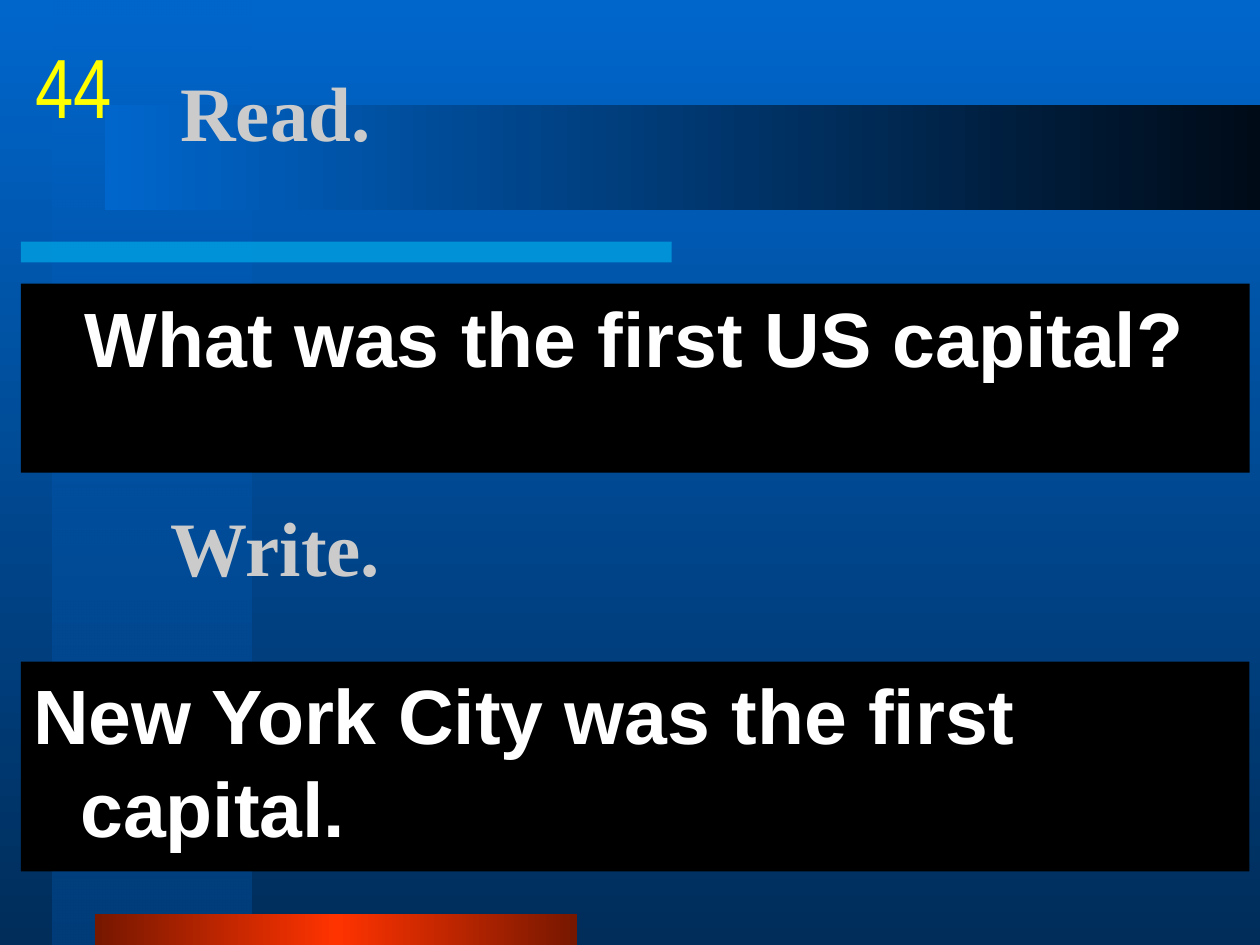
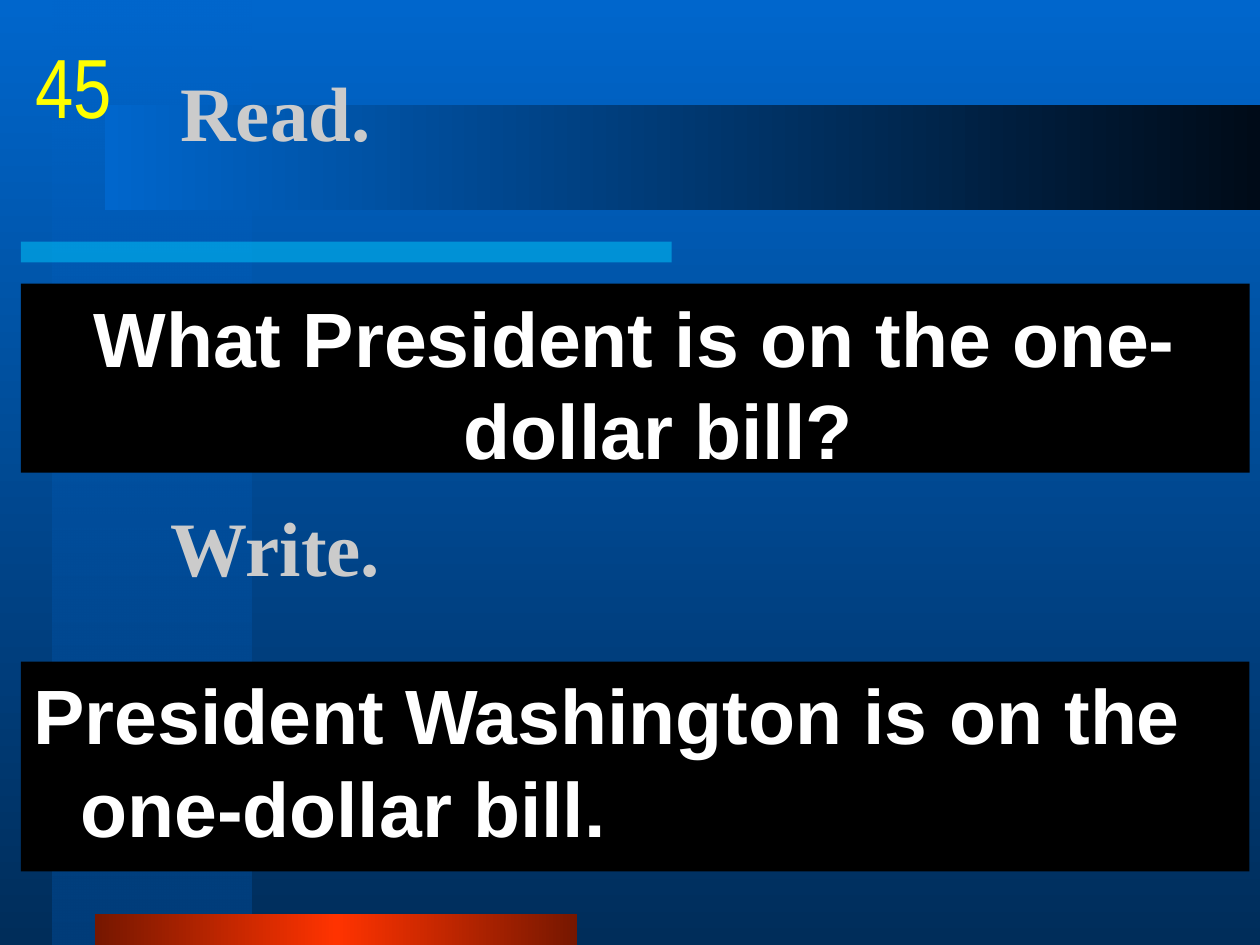
import pptx
import pptx.dml.color
import pptx.enum.shapes
import pptx.enum.text
import pptx.oxml.ns
import pptx.util
from lxml import etree

Cm = pptx.util.Cm
Pt = pptx.util.Pt
RGB = pptx.dml.color.RGBColor
ALIGN = pptx.enum.text.PP_ALIGN
ANCHOR = pptx.enum.text.MSO_ANCHOR
qn = pptx.oxml.ns.qn

BLUE = RGB(0x00, 0x66, 0xCC)
NAVY = RGB(0x00, 0x2D, 0x5A)
STEEL = RGB(0x00, 0x3D, 0x7A)
NIGHT = RGB(0x00, 0x0B, 0x18)
CYAN = RGB(0x00, 0xCC, 0xFF)
RED = RGB(0xFF, 0x33, 0x00)
RUST = RGB(0x76, 0x17, 0x00)
BLACK = RGB(0x00, 0x00, 0x00)
WHITE = RGB(0xFF, 0xFF, 0xFF)
GREY = RGB(0xCB, 0xCB, 0xCB)
YELLOW = RGB(0xFF, 0xFF, 0x00)

WIDE, HIGH = 25.4, 19.05
HEAD = dict(font="Times New Roman", color=GREY, anchor=ANCHOR.MIDDLE)
CARD = dict(font="Arial", color=WHITE, hang=0.95, before=20)
CARDS = [
    ("44", "What was the first US capital?", "New York City was the first capital."),
    ("45", "What President is on the one-dollar bill?",
     "President Washington is on the one-dollar bill."),
]


def place(shape, box):
    """Move a shape to a box given in centimetres."""
    shape.left, shape.top, shape.width, shape.height = map(Cm, box)


def fade(color, alpha):
    """Set the opacity, in percent, of a colour element."""
    etree.SubElement(color, qn("a:alpha")).set("val", str(alpha * 1000))


def blend(fill, root, angle, stops):
    """Fill with evenly spaced colour stops, each a colour and opacity."""
    fill.gradient()
    fill.gradient_angle = angle
    row = root.find(".//" + qn("a:gsLst"))
    for old in list(row):
        row.remove(old)
    for i, (color, alpha) in enumerate(stops):
        stop = etree.SubElement(row, qn("a:gs"))
        stop.set("pos", str(100000 * i // (len(stops) - 1)))
        tint = etree.SubElement(stop, qn("a:srgbClr"))
        tint.set("val", str(color))
        if alpha < 100:
            fade(tint, alpha)


def bar(slide, box):
    """Add a plain rectangle without line or shadow."""
    shape = slide.shapes.add_shape(pptx.enum.shapes.MSO_SHAPE.RECTANGLE, *map(Cm, box))
    shape.shadow.inherit = False
    shape.line.fill.background()
    return shape


def write(shape, text, font, color, size=44, bold=True, align=ALIGN.LEFT,
          anchor=ANCHOR.TOP, hang=0, before=0, wrap=True):
    """Put formatted text into a shape."""
    frame = shape.text_frame
    frame.auto_size = pptx.enum.text.MSO_AUTO_SIZE.NONE
    frame.word_wrap = wrap
    frame.vertical_anchor = anchor
    para = frame.paragraphs[0]
    para.alignment = align
    props = para._p.get_or_add_pPr()
    props.set("marL", str(Cm(hang)))
    props.set("indent", str(-Cm(hang)))
    space = etree.SubElement(props, qn("a:spcBef"))
    etree.SubElement(space, qn("a:spcPct")).set("val", str(before * 1000))
    etree.SubElement(props, qn("a:buNone"))
    run = para.add_run()
    run.text = text
    run.font.name, run.font.size, run.font.bold = font, Pt(size), bold
    run.font.color.rgb = color


def theme(deck, layout, slide):
    """Paint the backdrop and move the shared bars to the layout."""
    master = deck.slide_master
    blend(master.background.fill, master.element, 270, [(BLUE, 100), (NAVY, 100)])
    side = bar(slide, (1.06, 0, 4.02, HIGH))
    blend(side.fill, side.element, 270, [(BLUE, 50), (STEEL, 100)])
    rule = bar(slide, (0.42, 4.87, 13.12, 0.42))
    rule.fill.solid()
    rule.fill.fore_color.rgb = CYAN
    fade(rule.element.spPr.find(".//" + qn("a:srgbClr")), 50)
    foot = bar(slide, (1.92, 18.42, 9.72, HIGH - 18.42))
    blend(foot.fill, foot.element, 0, [(RUST, 100), (RED, 100), (RUST, 100)])
    band = bar(slide, (2.12, 2.12, WIDE - 2.12, 2.12))
    blend(band.fill, band.element, 0, [(BLUE, 100), (NIGHT, 100)])
    for i, shape in enumerate((side, rule, foot, band)):
        shape.element.find(".//" + qn("p:cNvPr")).set("id", str(100 + i))
        layout.shapes.element.append(shape.element)


def ask(slide, box, text):
    """Fill the upper region with its title and question."""
    x, y, w, h = box
    title, body = slide.placeholders
    place(title, (x + 2.96, y, 21.59, 3.18))
    write(title, "Read.", **HEAD)
    place(body, (x, y + h - 3.81, w, 3.81))
    body.fill.solid()
    body.fill.fore_color.rgb = BLACK
    write(body, text, align=ALIGN.CENTER, **CARD)


def reply(slide, box, text):
    """Fill the lower region with its heading and answer."""
    x, y, w, h = box
    head = slide.shapes.add_textbox(*map(Cm, (x + 2.76, y, 21.59, 4.23)))
    write(head, "Write.", **HEAD)
    card = bar(slide, (x, y + h - 4.23, w, 4.23))
    card.fill.solid()
    card.fill.fore_color.rgb = BLACK
    write(card, text, **CARD)


def count(slide, box, text):
    """Show the card number in the corner."""
    label = slide.shapes.add_textbox(*map(Cm, box))
    write(label, text, "Arial Narrow", YELLOW, size=48, bold=False,
          align=ALIGN.CENTER, wrap=False)


def main():
    """Build and save the deck."""
    deck = pptx.Presentation()
    deck.slide_width, deck.slide_height = Cm(WIDE), Cm(HIGH)
    layout = deck.slide_layouts[1]
    for i, (mark, query, answer) in enumerate(CARDS):
        slide = deck.slides.add_slide(layout)
        if i == 0:
            theme(deck, layout, slide)
        ask(slide, (0.42, 0.64, 24.77, 8.89), query)
        reply(slide, (0.42, 8.89, 24.77, 8.68), answer)
        count(slide, (0.42, 0.58, 2.12, 2.12), mark)
    deck.save("out.pptx")


if __name__ == "__main__":
    main()
